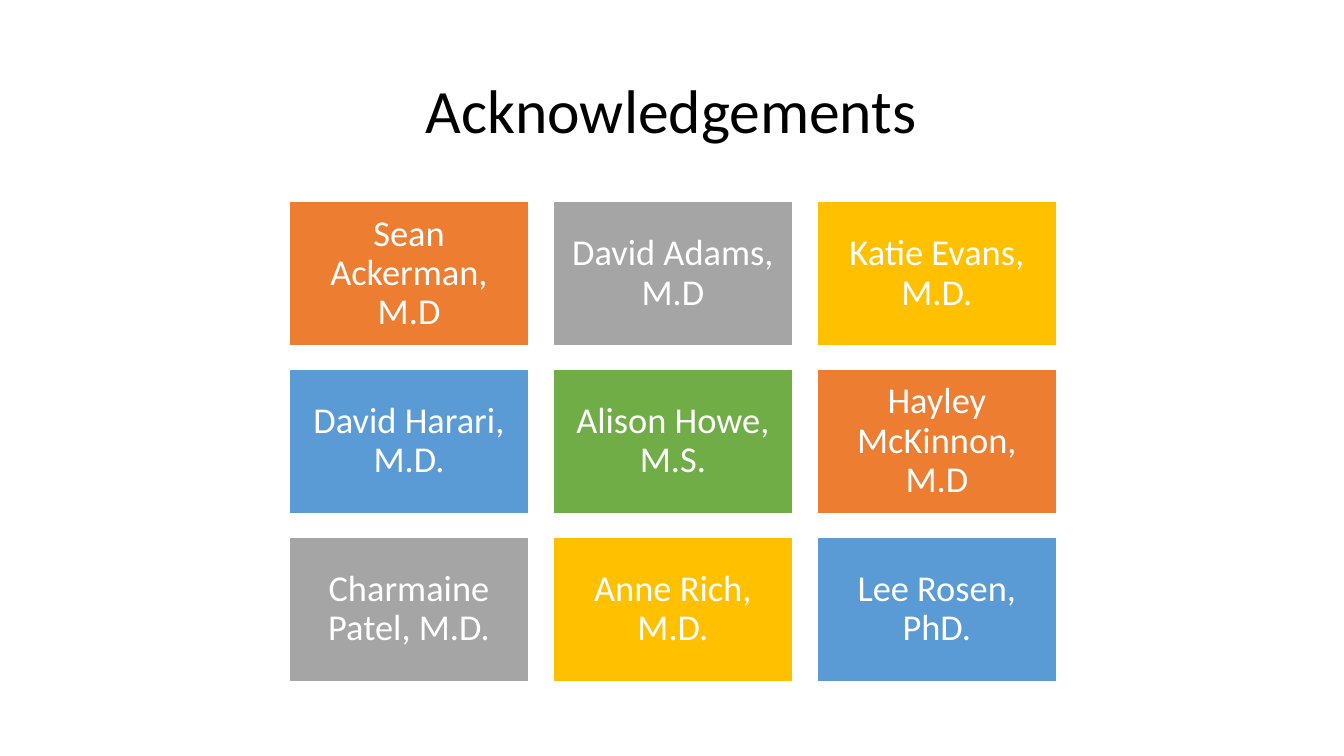
from dataclasses import dataclass

from pptx import Presentation
from pptx.dml.color import RGBColor
from pptx.enum.shapes import MSO_SHAPE
from pptx.enum.text import MSO_ANCHOR, PP_ALIGN
from pptx.util import Pt


@dataclass(frozen=True)
class Theme:
    font: str = "Calibri"
    title_size: int = 44
    name_size: int = 26
    black: str = "000000"
    white: str = "FFFFFF"
    # orange, grey, yellow, blue, green
    tiles: tuple = ("ED7D31", "A5A5A5", "FFC000", "5B9BD5", "70AD47")


THEME = Theme()
NAMES = [
    "Sean Ackerman, M.D", "David Adams, M.D", "Katie Evans, M.D.",
    "David Harari, M.D.", "Alison Howe, M.S.", "Hayley McKinnon, M.D",
    "Charmaine Patel, M.D.", "Anne Rich, M.D.", "Lee Rosen, PhD.",
]
COLUMNS = 3
GRID_LEFT, GRID_TOP = 206.5, 144
TILE_WIDTH, TILE_HEIGHT = 171.4, 102.8
GAP = 17.1
TILE_INSET = 7.8


def write_centred(shape, text, size, colour):
    frame = shape.text_frame
    frame.word_wrap = True
    frame.vertical_anchor = MSO_ANCHOR.MIDDLE
    paragraph = frame.paragraphs[0]
    paragraph.text = text
    paragraph.alignment = PP_ALIGN.CENTER
    paragraph.line_spacing = 0.9
    paragraph.font.name = THEME.font
    paragraph.font.size = Pt(size)
    paragraph.font.color.rgb = RGBColor.from_string(colour)
    return frame


deck = Presentation()
deck.slide_width, deck.slide_height = Pt(960), Pt(540)
slide = deck.slides.add_slide(deck.slide_layouts[6])

title = slide.shapes.add_textbox(Pt(169.2), Pt(28.8), Pt(621), Pt(104.4))
write_centred(title, "Acknowledgements", THEME.title_size, THEME.black)

for index, name in enumerate(NAMES):
    row, column = divmod(index, COLUMNS)
    tile = slide.shapes.add_shape(
        MSO_SHAPE.RECTANGLE,
        Pt(GRID_LEFT + column * (TILE_WIDTH + GAP)),
        Pt(GRID_TOP + row * (TILE_HEIGHT + GAP)),
        Pt(TILE_WIDTH), Pt(TILE_HEIGHT),
    )
    tile.shadow.inherit = False
    tile.fill.solid()
    tile.fill.fore_color.rgb = RGBColor.from_string(THEME.tiles[index % len(THEME.tiles)])
    tile.line.color.rgb = RGBColor.from_string(THEME.white)
    tile.line.width = Pt(1)
    frame = write_centred(tile, name, THEME.name_size, THEME.white)
    frame.margin_left = frame.margin_right = Pt(TILE_INSET)
    frame.margin_top = frame.margin_bottom = Pt(TILE_INSET)

deck.save("out.pptx")
